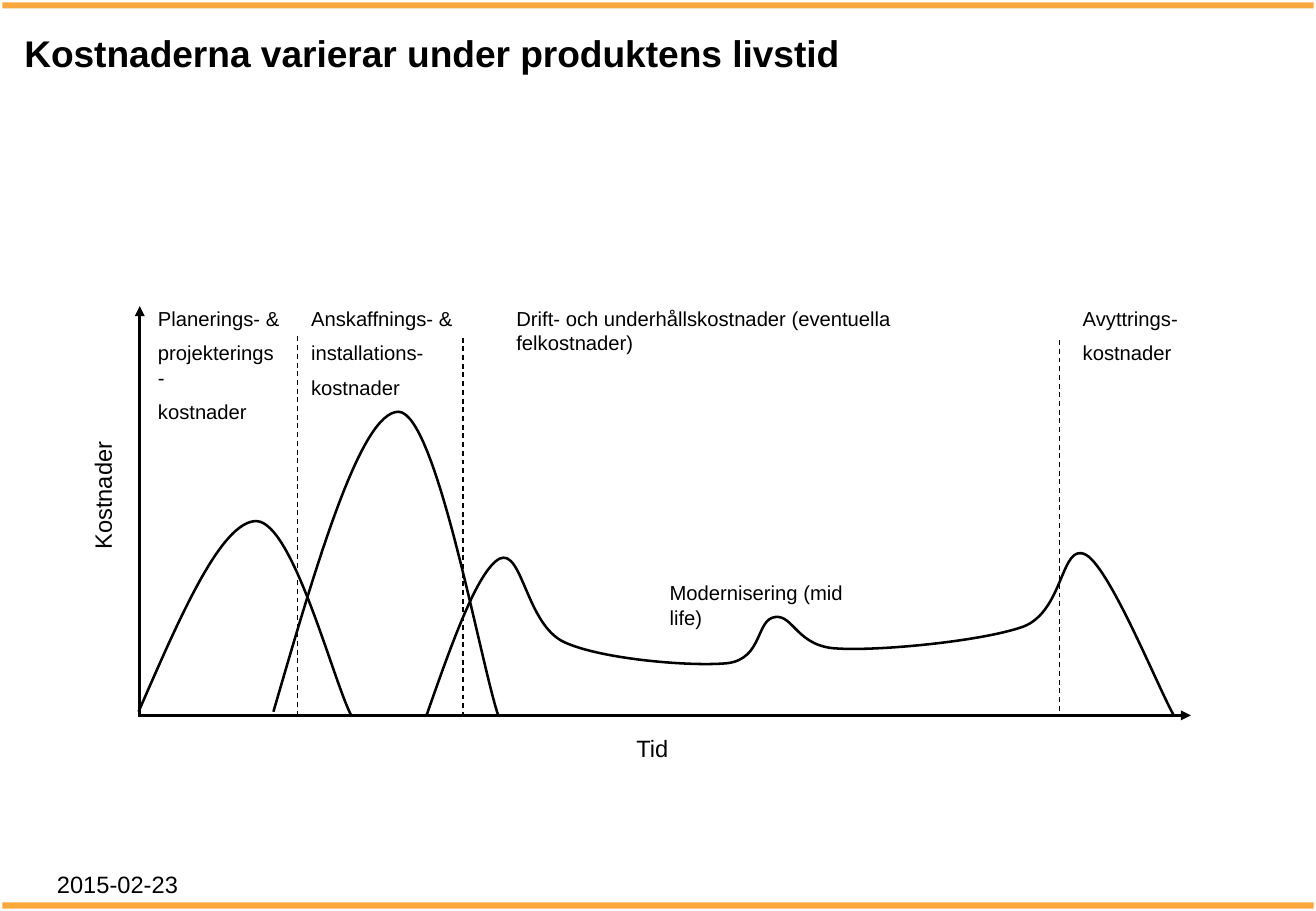
"""Slide with the cost curves of a product over its lifetime."""
from lxml import etree
from pptx import Presentation
from pptx.dml.color import RGBColor
from pptx.enum.dml import MSO_LINE
from pptx.enum.shapes import MSO_CONNECTOR, MSO_SHAPE
from pptx.enum.text import MSO_ANCHOR, PP_ALIGN
from pptx.oxml.ns import qn
from pptx.util import Inches, Pt

STRAIGHT, RECT = MSO_CONNECTOR.STRAIGHT, MSO_SHAPE.RECTANGLE
DASH, TOP = MSO_LINE.DASH, MSO_ANCHOR.TOP
LEFT, CENTER = PP_ALIGN.LEFT, PP_ALIGN.CENTER
BLACK = RGBColor(0x00, 0x00, 0x00)
ORANGE = RGBColor(0xFA, 0xA8, 0x3D)
FONT = "Arial"

TITLE = ("Kostnaderna varierar under produktens livstid", (0.14, 0.21, 10.55, 0.88))
DATE = ("2015-02-23", (0.37, 7.11, 3.01, 0.34))
TIME_AXIS = ("Tid", (5.15, 6, 0.44, 0.32))
COST_AXIS = ("Kostnader", (0.32, 3.92, 1.05, 0.32))
PHASES = [
    (["Planerings- &", "projekterings-", "kostnader"], (1.26, 2.48, 1.09, 0.88)),
    (["Anskaffnings- &", "installations-", "kostnader"], (2.52, 2.48, 1.27, 0.88)),
    (["Drift- och underhållskostnader (eventuella felkostnader)"],
     (4.21, 2.48, 4.16, 0.28)),
    (["Modernisering (mid life)"], (5.47, 4.74, 1.81, 0.28)),
    (["Avyttrings-", "kostnader"], (8.87, 2.48, 0.9, 0.58)),
]
BAR_TOPS = [0.02, 7.43]
AXES = [((1.14, 5.89), (9.8, 5.89)), ((1.15, 5.89), (1.15, 2.52))]
DIVIDERS = [((2.45, 2.77), (2.45, 5.88)), ((3.81, 2.78), (3.81, 5.88)),
            ((8.72, 2.8), (8.72, 5.9))]
PLANNING = [(1.14, 5.86), (1.48, 5.08), (1.82, 4.29), (2.11, 4.29),
            (2.41, 4.3), (2.74, 5.6), (2.89, 5.89)]
PURCHASE = [(2.25, 5.86), (2.61, 4.62), (2.97, 3.39), (3.28, 3.39),
            (3.59, 3.4), (3.95, 5.44), (4.1, 5.89)]
OPERATION = [(3.51, 5.89), (3.72, 5.29), (3.93, 4.7), (4.11, 4.6),
             (4.3, 4.51), (4.33, 5.15), (4.65, 5.29),
             (4.96, 5.43), (5.7, 5.49), (5.99, 5.46),
             (6.28, 5.42), (6.22, 5.1), (6.38, 5.08),
             (6.53, 5.06), (6.56, 5.33), (6.9, 5.34),
             (7.24, 5.36), (8.08, 5.28), (8.42, 5.16),
             (8.76, 5.03), (8.73, 4.45), (8.94, 4.57),
             (9.14, 4.69), (9.53, 5.66), (9.66, 5.89)]


def add_text(s, lines, box, size, bold=False, align=LEFT, left=0.04, top=0.04):
    tb = s.shapes.add_textbox(*map(Inches, box))
    tf = tb.text_frame
    tf.word_wrap = True
    tf.vertical_anchor = TOP
    tf.margin_left, tf.margin_right = Inches(left), Pt(3)
    tf.margin_top = tf.margin_bottom = Inches(top)
    for i, line in enumerate(lines):
        p = tf.paragraphs[0] if i == 0 else tf.add_paragraph()
        p.alignment = align
        if i:
            p.space_before = Pt(6)
        r = p.add_run()
        r.text = line
        r.font.name, r.font.size, r.font.bold = FONT, Pt(size), bold
        r.font.color.rgb = BLACK
    return tb


def add_line(s, start, end, width):
    line = s.shapes.add_connector(STRAIGHT, *map(Inches, start + end))
    line.line.color.rgb = BLACK
    line.line.width = Pt(width)
    etree.SubElement(line._element.spPr, qn("a:effectLst"))
    return line


def add_curve(s, knots):
    builder = s.shapes.build_freeform(*map(Inches, knots[0]))
    builder.add_line_segments([tuple(map(Inches, k)) for k in knots[1:]], close=False)
    curve = builder.convert_to_shape()
    segments = list(curve._element.iter(qn("a:lnTo")))
    for i in range(0, len(segments), 3):
        first, *others = segments[i:i + 3]
        bend = etree.SubElement(first.getparent(), qn("a:cubicBezTo"))
        for segment in (first, *others):
            bend.append(segment[0])
            segment.getparent().remove(segment)
    curve.shadow.inherit = False
    curve.fill.background()
    curve.line.color.rgb = BLACK
    curve.line.width = Pt(1.5)


def main():
    prs = Presentation()
    prs.slide_width, prs.slide_height = Inches(10.83), Inches(7.5)
    s = prs.slides.add_slide(prs.slide_layouts[6])

    for top in BAR_TOPS:
        bar = s.shapes.add_shape(RECT, *map(Inches, (0.02, top, 10.79, 0.05)))
        bar.shadow.inherit = False
        bar.fill.solid()
        bar.fill.fore_color.rgb = ORANGE
        bar.line.fill.background()

    add_text(s, [TITLE[0]], TITLE[1], 22, bold=True, left=0.06)
    for start, end in AXES:
        axis = add_line(s, start, end, 1.5)
        etree.SubElement(axis.line._get_or_add_ln(), qn("a:tailEnd"), type="triangle")
    for start, end in DIVIDERS:
        add_line(s, start, end, 0.75).line.dash_style = DASH
    for knots in (PLANNING, PURCHASE, OPERATION):
        add_curve(s, knots)

    add_text(s, [TIME_AXIS[0]], TIME_AXIS[1], 14, align=CENTER)
    add_text(s, [COST_AXIS[0]], COST_AXIS[1], 14, align=CENTER).rotation = 270
    for lines, box in PHASES:
        add_text(s, lines, box, 12)
    add_text(s, [DATE[0]], DATE[1], 14, left=0.1, top=0.05)
    prs.save("out.pptx")


if __name__ == "__main__":
    main()
